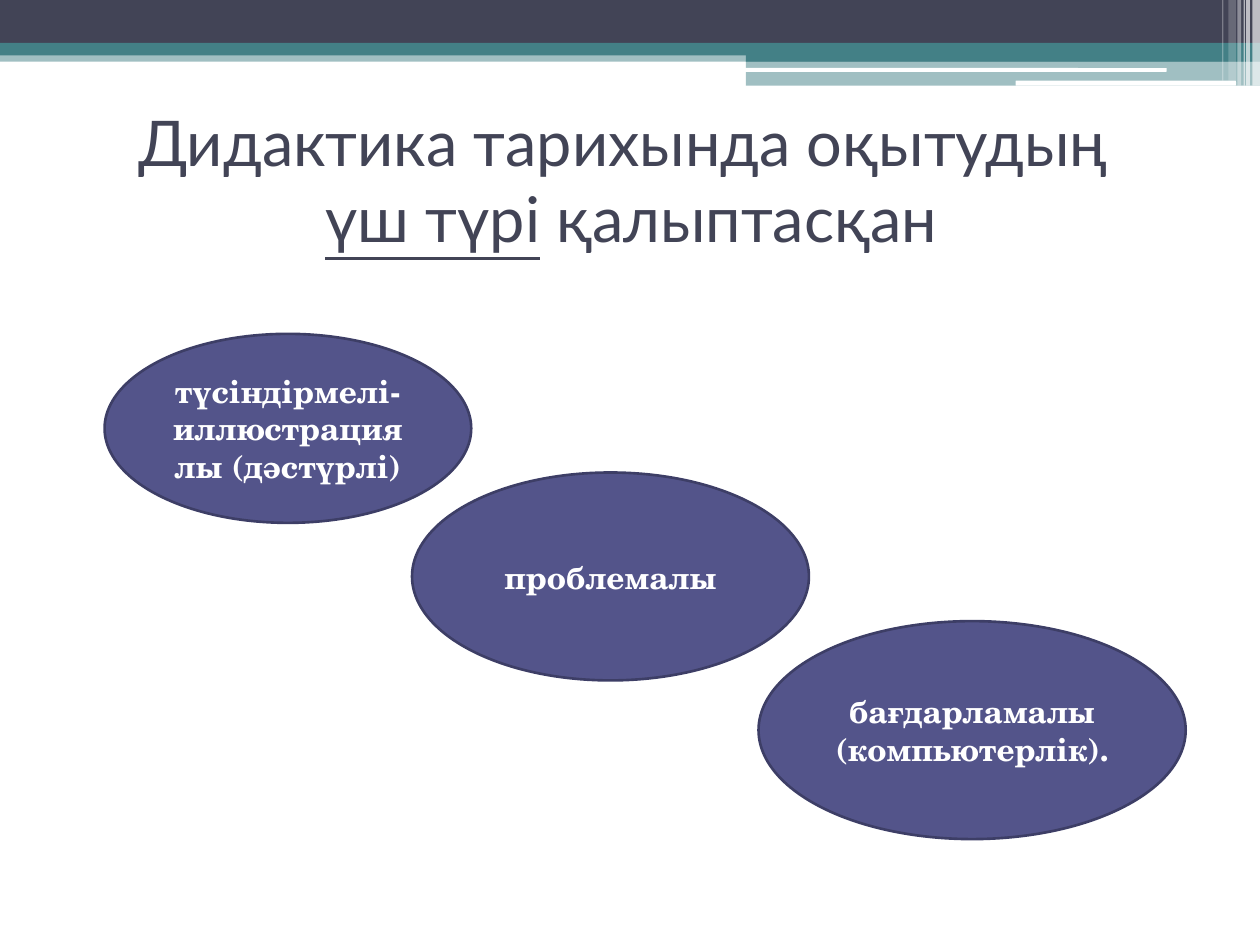
from dataclasses import dataclass

from lxml.etree import SubElement
from pptx import Presentation
from pptx.dml.color import RGBColor
from pptx.enum.shapes import MSO_SHAPE
from pptx.enum.text import MSO_ANCHOR, PP_ALIGN
from pptx.oxml.ns import qn
from pptx.util import Inches, Pt


@dataclass(frozen=True)
class Theme:
    """Colours, fonts and type sizes of the slide."""
    dark: str = "424456"
    teal: str = "438086"
    white: str = "FFFFFF"
    violet: str = "53548A"
    outline: str = "3D3E66"
    title_font: str = "Lato"
    body_font: str = "TeX Gyre Schola"
    title_size: int = 36
    body_size: int = 18


THEME = Theme()

BANDS = [
    (0, 0.4, 10, 0.09, THEME.teal, 50),
    (0, 0, 10, 0.34, THEME.dark, 100),
    (0, 0.34, 10, 0.1, THEME.teal, 100),
    (5.92, 0.39, 4.08, 0.1, THEME.teal, 100),
    (5.92, 0.48, 4.08, 0.2, THEME.teal, 50),
]
HIGHLIGHTS = [(5.91, 0.54, 3.35, 0.03), (8.06, 0.64, 1.75, 0.04)]
STRIPES = [
    (9.94, 0.06, 0.68, 65),
    (9.89, 0.03, 0.68, 65),
    (9.87, 0.01, 0.68, 60),
    (9.82, 0.03, 0.68, 40),
    (9.75, 0.06, 0.64, 20),
    (9.7, 0.01, 0.64, 30),
]
TEACHING_TYPES = [
    (0.83, 2.65, 2.91, 1.5, "түсіндірмелі-иллюстрациялы (дәстүрлі)"),
    (3.27, 3.75, 3.15, 1.65, "проблемалы"),
    (6.02, 4.93, 3.39, 1.73, "бағдарламалы (компьютерлік)."),
]


def add_filled_shape(slide, kind, left, top, width, height, color, opacity=100):
    """Add a borderless preset shape with a solid, possibly translucent fill."""
    shape = slide.shapes.add_shape(
        kind, Inches(left), Inches(top), Inches(width), Inches(height))
    shape.shadow.inherit = False
    shape.fill.solid()
    shape.fill.fore_color.rgb = RGBColor.from_string(color)
    shape.line.fill.background()
    if opacity < 100:
        color_element = shape._element.spPr.find(qn("a:solidFill"))[0]
        SubElement(color_element, qn("a:alpha"), val=str(opacity * 1000))
    return shape


def style_paragraph(paragraph, font_name, size, color, bold=False):
    """Centre a paragraph and set its font."""
    paragraph.alignment = PP_ALIGN.CENTER
    font = paragraph.font
    font.name = font_name
    font.size = Pt(size)
    font.bold = bold
    font.color.rgb = RGBColor.from_string(color)


def add_header(slide):
    """Draw the layered bands, highlights and stripes along the top edge."""
    for left, top, width, height, color, opacity in BANDS:
        add_filled_shape(slide, MSO_SHAPE.RECTANGLE, left, top, width, height, color, opacity)
    for left, top, width, height in HIGHLIGHTS:
        add_filled_shape(
            slide, MSO_SHAPE.ROUNDED_RECTANGLE, left, top, width, height, THEME.white)
    for left, width, height, opacity in STRIPES:
        add_filled_shape(
            slide, MSO_SHAPE.RECTANGLE, left, 0, width, height, THEME.white, opacity)


def add_title(slide):
    """Add the two-line title with its underlined words."""
    box = slide.shapes.add_textbox(Inches(0.51), Inches(0.84), Inches(9), Inches(1.17))
    frame = box.text_frame
    frame.word_wrap = True
    frame.vertical_anchor = MSO_ANCHOR.MIDDLE
    paragraph = frame.paragraphs[0]
    style_paragraph(paragraph, THEME.title_font, THEME.title_size, THEME.dark)
    paragraph.add_run().text = "Дидактика тарихында оқытудың "
    paragraph.add_line_break()
    underlined = paragraph.add_run()
    underlined.text = "үш түрі"
    underlined.font.underline = True
    paragraph.add_run().text = " қалыптасқан"


def add_teaching_type(slide, left, top, width, height, text):
    """Add an outlined ellipse naming one type of teaching."""
    ellipse = add_filled_shape(
        slide, MSO_SHAPE.OVAL, left, top, width, height, THEME.violet)
    ellipse.line.color.rgb = RGBColor.from_string(THEME.outline)
    ellipse.line.width = Pt(1.5)
    frame = ellipse.text_frame
    frame.word_wrap = True
    frame.vertical_anchor = MSO_ANCHOR.MIDDLE
    paragraph = frame.paragraphs[0]
    paragraph.text = text
    style_paragraph(paragraph, THEME.body_font, THEME.body_size, THEME.white, bold=True)


def main():
    """Build and save the slide."""
    presentation = Presentation()
    presentation.slide_width = Inches(10)
    presentation.slide_height = Inches(7.5)
    slide = presentation.slides.add_slide(presentation.slide_layouts[6])
    add_header(slide)
    add_title(slide)
    for teaching_type in TEACHING_TYPES:
        add_teaching_type(slide, *teaching_type)
    presentation.save("out.pptx")


if __name__ == "__main__":
    main()
